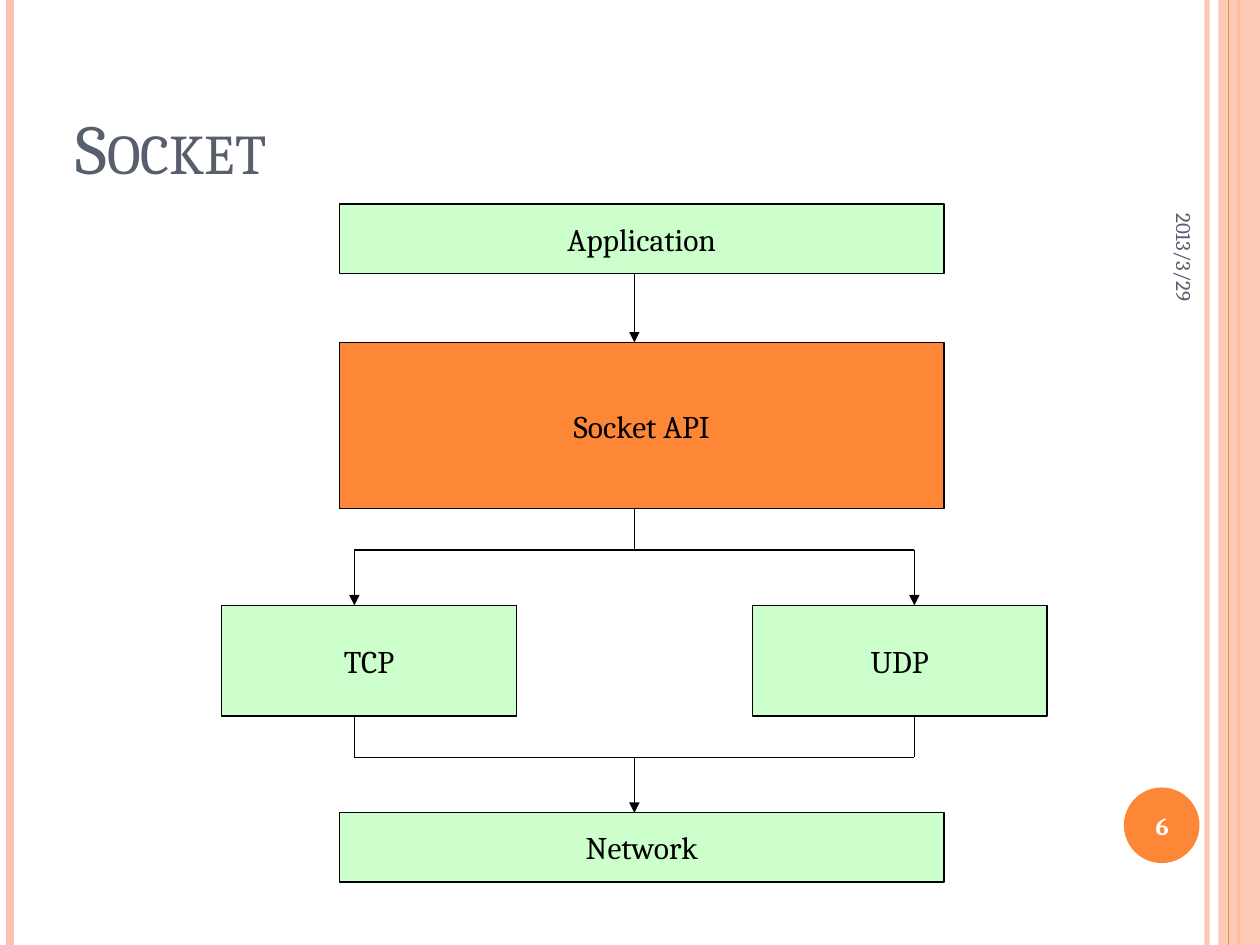
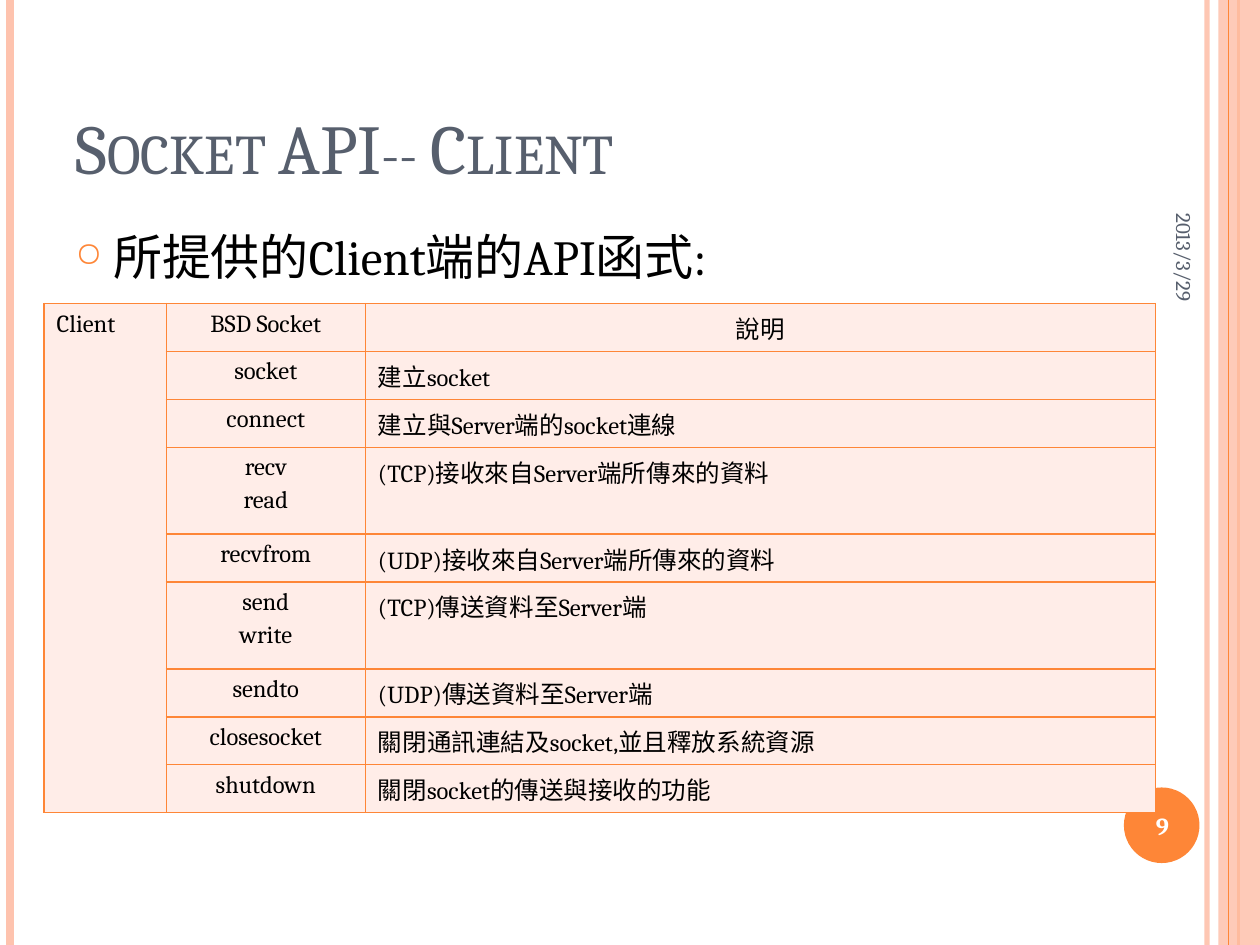
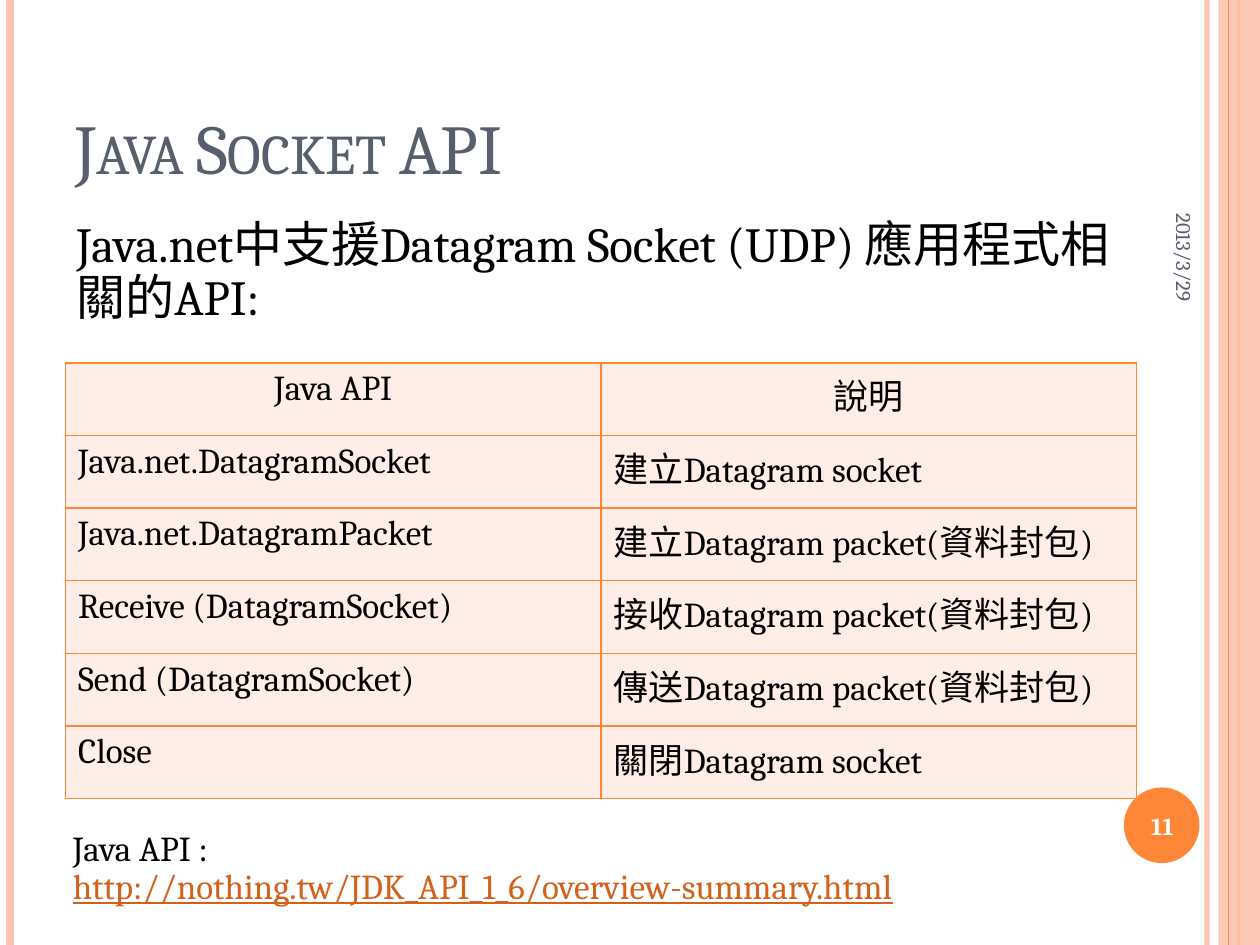
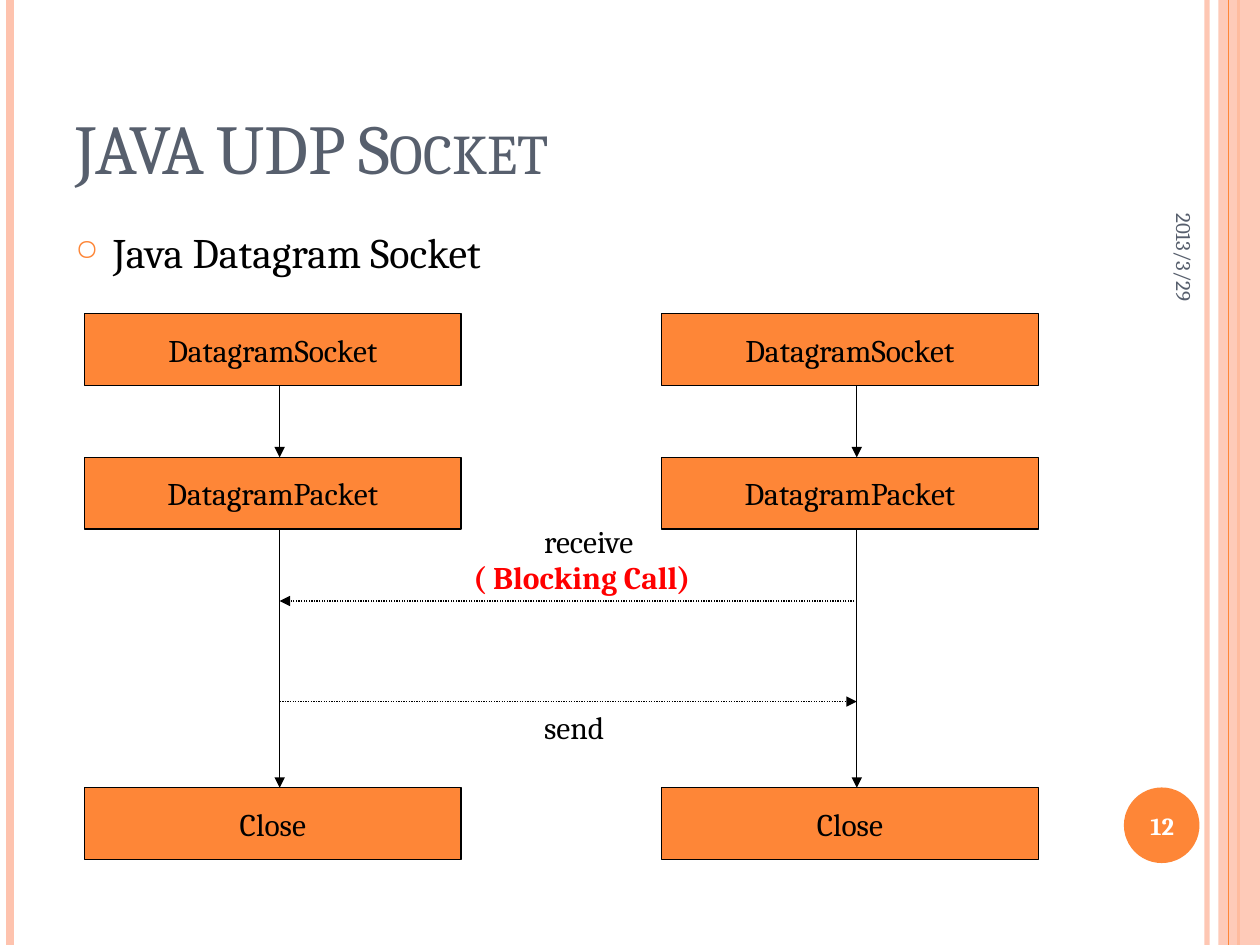
import itertools

import lxml.etree
import pptx
import pptx.dml.color
import pptx.enum.dml
import pptx.enum.shapes
import pptx.enum.text
import pptx.oxml.ns
import pptx.util

RGBColor = pptx.dml.color.RGBColor
ORANGE = RGBColor(0xFE, 0x86, 0x37)
PEACH = RGBColor(0xFE, 0xC3, 0xAE)
PALE_PEACH = RGBColor(0xFF, 0xED, 0xE8)
MINT = RGBColor(0xCC, 0xFF, 0xCC)
SLATE = RGBColor(0x57, 0x5F, 0x6D)
LINK = RGBColor(0xD2, 0x61, 0x1C)
RED = RGBColor(0xFF, 0x00, 0x00)
BLACK = RGBColor(0x00, 0x00, 0x00)
WHITE = RGBColor(0xFF, 0xFF, 0xFF)

FONT = "Cambria"
WIDTH, HEIGHT = 10, 7.5
LEFT = pptx.enum.text.PP_ALIGN.LEFT
CENTER = pptx.enum.text.PP_ALIGN.CENTER
RIGHT = pptx.enum.text.PP_ALIGN.RIGHT
TOP = pptx.enum.text.MSO_ANCHOR.TOP
MIDDLE = pptx.enum.text.MSO_ANCHOR.MIDDLE
DOTTED = pptx.enum.dml.MSO_LINE.ROUND_DOT
RECTANGLE = pptx.enum.shapes.MSO_SHAPE.RECTANGLE
OVAL = pptx.enum.shapes.MSO_SHAPE.OVAL
STRAIGHT = pptx.enum.shapes.MSO_CONNECTOR.STRAIGHT
Inches, Pt, qn = pptx.util.Inches, pptx.util.Pt, pptx.oxml.ns.qn


def add_text(slide, box, text, size, color=BLACK, align=LEFT, anchor=TOP, bold=False, fill=None):
    """Add a text box, or an outlined rectangle if a fill is given; box is in inches."""
    place = [Inches(length) for length in box]
    if fill is None:
        holder = slide.shapes.add_textbox(*place)
    else:
        holder = slide.shapes.add_shape(RECTANGLE, *place)
        holder.shadow.inherit = False
        holder.fill.solid()
        holder.fill.fore_color.rgb = fill
        holder.line.color.rgb = BLACK
        holder.line.width = Pt(0.75)
    frame = holder.text_frame
    frame.word_wrap = fill is None
    frame.vertical_anchor = anchor
    for index, words in enumerate(text.split("\n")):
        paragraph = frame.add_paragraph() if index else frame.paragraphs[0]
        paragraph.alignment = align
        run = paragraph.add_run()
        run.text = words
        run.font.name, run.font.size, run.font.bold = FONT, Pt(size), bold
        run.font.color.rgb = color
    return holder


def add_line(slide, start, end, color=BLACK, width=0.75, arrow=False, dash=None):
    line = slide.shapes.add_connector(STRAIGHT, *[Inches(length) for length in (*start, *end)])
    line.line.color.rgb = color
    line.line.width = Pt(width)
    if dash is not None:
        line.line.dash_style = dash
    if arrow:
        lxml.etree.SubElement(line.line._get_or_add_ln(), qn("a:tailEnd"), type="triangle")
    lxml.etree.SubElement(line._element.spPr, qn("a:effectLst"))
    return line


deck = pptx.Presentation()
deck.slide_width, deck.slide_height = Inches(WIDTH), Inches(HEIGHT)

# Shared frame: side bands, title, date and page number
pages = []
for heading, number in (("Socket", 6), ("Socket API-- Client", 9),
                        ("Java Socket API", 11), ("JAVA UDP Socket", 12)):
    page = deck.slides.add_slide(deck.slide_layouts[5])
    pages.append(page)

    rule = add_line(page, (9.58, 0), (9.58, HEIGHT), PEACH, 3)
    add_line(page, (0.08, 0), (0.08, HEIGHT), PEACH, 4.5)
    add_line(page, (9.83, 0), (9.83, HEIGHT), ORANGE, 1.5)
    band = page.shapes.add_shape(RECTANGLE, Inches(9.67), 0, Inches(WIDTH - 9.67), Inches(HEIGHT))
    add_line(page, (9.75, 0), (9.75, HEIGHT), ORANGE)
    badge = page.shapes.add_shape(OVAL, Inches(8.92), Inches(6.25), Inches(0.6), Inches(0.6))
    for shape, color in ((band, PEACH), (badge, ORANGE)):
        shape.shadow.inherit = False
        shape.fill.solid()
        shape.fill.fore_color.rgb = color
        shape.line.fill.background()
    for see_through, opacity in ((rule, "93000"), (band, "87000")):
        tint = see_through._element.spPr.find(".//" + qn("a:srgbClr"))
        lxml.etree.SubElement(tint, qn("a:alpha"), val=opacity)

    title = page.shapes.title
    title.left, title.top = Inches(0.5), Inches(0.3)
    title.width, title.height = Inches(8.17), Inches(1.25)
    title.text_frame.vertical_anchor = pptx.enum.text.MSO_ANCHOR.BOTTOM
    title.text_frame.auto_size = pptx.enum.text.MSO_AUTO_SIZE.NONE
    title.text_frame.paragraphs[0].alignment = LEFT
    run = title.text_frame.paragraphs[0].add_run()
    run.text = heading
    run.font.name, run.font.size = FONT, Pt(40)
    run.font.color.rgb = SLATE
    run.font._element.set("cap", "small")

    date = add_text(page, (8.3, 1.18, 2.2, 0.42), "2013/3/29", 12, SLATE, RIGHT, MIDDLE)
    date.rotation = 90
    add_text(page, (8.89, 6.27, 0.67, 0.57), str(number), 14, WHITE, CENTER, MIDDLE, bold=True)

layers_page, client_page, java_page, udp_page = pages

# Bulleted lead lines
for page, lead, size in ((client_page, "所提供的Client端的API函式:", 28),
                         (udp_page, "Java Datagram Socket", 24)):
    body = add_text(page, (0.5, 1.75, 8.17, 5.33), lead, size)
    paragraph = body.text_frame.paragraphs[0]
    paragraph.space_before = Pt(6)
    properties = paragraph._p.get_or_add_pPr()
    properties.set("marL", str(Inches(0.3)))
    properties.set("indent", str(-Inches(0.3)))
    bullet_color = lxml.etree.SubElement(properties, qn("a:buClr"))
    lxml.etree.SubElement(bullet_color, qn("a:srgbClr"), val=str(ORANGE))
    lxml.etree.SubElement(properties, qn("a:buSzPct"), val="70000")
    lxml.etree.SubElement(properties, qn("a:buChar"), char="○")

# Protocol layers on a grid of 56 columns and 49 rows
columns = [1.76 + (8.31 - 1.76) / 56 * step for step in range(57)]
rows = [1.62 + (7 - 1.62) / 49 * step
        for step in itertools.accumulate((0, 5, 5, 12, 3, 4, 8, 3, 4, 5))]
for layer, first, last, top, bottom, fill in (
        ("Application", 8, 49, 0, 1, MINT),
        ("Socket API", 8, 49, 2, 3, ORANGE),
        ("TCP", 0, 20, 5, 6, MINT),
        ("UDP", 36, 56, 5, 6, MINT),
        ("Network", 8, 49, 8, 9, MINT)):
    box = (columns[first], rows[top], columns[last] - columns[first], rows[bottom] - rows[top])
    add_text(layers_page, box, layer, 18, align=CENTER, anchor=MIDDLE, fill=fill)

tcp, trunk, udp = 9, 28, 47
for from_column, from_row, to_column, to_row, arrow in (
        (trunk, 1, trunk, 2, True),
        (trunk, 3, trunk, 4, False),
        (tcp, 4, udp, 4, False),
        (tcp, 4, tcp, 5, True),
        (udp, 4, udp, 5, True),
        (tcp, 6, tcp, 7, False),
        (udp, 6, udp, 7, False),
        (tcp, 7, udp, 7, False),
        (trunk, 7, trunk, 8, True)):
    add_line(layers_page, (columns[from_column], rows[from_row]),
             (columns[to_column], rows[to_row]), arrow=arrow)

# API tables
client_calls = (
    ("Client", "BSD Socket", "說明"),
    ("", "socket", "建立socket"),
    ("", "connect", "建立與Server端的socket連線"),
    ("", "recv\nread", "(TCP)接收來自Server端所傳來的資料"),
    ("", "recvfrom", "(UDP)接收來自Server端所傳來的資料"),
    ("", "send\nwrite", "(TCP)傳送資料至Server端"),
    ("", "sendto", "(UDP)傳送資料至Server端"),
    ("", "closesocket", "關閉通訊連結及socket,並且釋放系統資源"),
    ("", "shutdown", "關閉socket的傳送與接收的功能"),
)
java_calls = (
    ("Java API", "說明"),
    ("Java.net.DatagramSocket", "建立Datagram socket"),
    ("Java.net.DatagramPacket", "建立Datagram packet(資料封包)"),
    ("Receive (DatagramSocket)", "接收Datagram packet(資料封包)"),
    ("Send (DatagramSocket)", "傳送Datagram packet(資料封包)"),
    ("Close", "關閉Datagram socket"),
)
for page, calls, left, top, widths, row_height, size, header_aligns, aligns in (
        (client_page, client_calls, 0.35, 2.41, (0.97, 1.58, 6.27), 0.38, 14,
         (LEFT, CENTER, CENTER), (LEFT, CENTER, LEFT)),
        (java_page, java_calls, 0.52, 2.88, (4.25, 4.25), 3.46 / 6, 20,
         (CENTER, CENTER), (LEFT, LEFT))):
    heights = [0.69 if "\n" in call[1] else row_height for call in calls]
    table = page.shapes.add_table(len(calls), len(widths), Inches(left), Inches(top),
                                  Inches(sum(widths)), Inches(sum(heights))).table
    for column, width in zip(table.columns, widths):
        column.width = Inches(width)
    for row_index, call in enumerate(calls):
        table.rows[row_index].height = Inches(heights[row_index])
        for column_index, text in enumerate(call):
            cell = table.cell(row_index, column_index)
            cell.fill.solid()
            cell.fill.fore_color.rgb = PALE_PEACH
            for line_index, words in enumerate(text.split("\n")):
                frame = cell.text_frame
                paragraph = frame.add_paragraph() if line_index else frame.paragraphs[0]
                paragraph.alignment = (aligns if row_index else header_aligns)[column_index]
                paragraph.space_before = Pt(size * 0.2)
                paragraph.font.size = Pt(size)
                if words:
                    run = paragraph.add_run()
                    run.text = words
                    run.font.name, run.font.size, run.font.bold = FONT, Pt(size), False
                    run.font.color.rgb = BLACK
            cell_properties = cell._tc.get_or_add_tcPr()
            for position, side in enumerate(("a:lnL", "a:lnR", "a:lnT", "a:lnB")):
                border = lxml.etree.Element(qn(side), w=str(Pt(1)))
                border_fill = lxml.etree.SubElement(border, qn("a:solidFill"))
                lxml.etree.SubElement(border_fill, qn("a:srgbClr"), val=str(ORANGE))
                cell_properties.insert(position, border)
    if page is client_page:
        table.cell(0, 0).merge(table.cell(len(calls) - 1, 0))

# Java API: introduction and reference
introduction = add_text(java_page, (0.51, 1.7, 8.5, 0.95),
                        "Java.net中支援Datagram Socket (UDP) 應用程式相關的API:", 28)
reference = add_text(java_page, (0.48, 6.55, 9.24, 0.71),
                     "Java API :\nhttp://nothing.tw/JDK_API_1_6/overview-summary.html", 20)
for passage in (introduction, reference):
    for paragraph in passage.text_frame.paragraphs:
        paragraph.line_spacing = 0.9
address = reference.text_frame.paragraphs[1].runs[0]
address.font.underline = True
address.font.color.rgb = LINK

# UDP exchange: two lifelines on rows of equal height
ROW = 0.57
FIRST_ROW = 2.49
socket_y, packet_y, receive_y, send_y, close_y = (
    FIRST_ROW + ROW * step for step in (0, 2, 4, 5.4, 6.6))
steps = (("DatagramSocket", socket_y), ("DatagramPacket", packet_y), ("Close", close_y))
lifelines = []
for left in (0.67, 5.25):
    lifeline = left + 1.55
    lifelines.append(lifeline)
    for step, top in steps:
        add_text(udp_page, (left, top, 2.99, ROW), step, 18,
                 align=CENTER, anchor=MIDDLE, fill=ORANGE)
    for (_, upper), (_, lower) in itertools.pairwise(steps):
        add_line(udp_page, (lifeline, upper + ROW), (lifeline, lower), arrow=True)

near, far = lifelines
add_line(udp_page, (near, send_y), (far, send_y), arrow=True, dash=DOTTED)
add_line(udp_page, (far, receive_y), (near, receive_y), arrow=True, dash=DOTTED)
add_text(udp_page, (4.22, send_y, 1.45, 0.58), "send", 18)
add_text(udp_page, (4.22, 4.09, 2.06, 0.58), "receive", 18)
add_text(udp_page, (3.66, 4.38, 2.36, 0.4), "( Blocking Call)", 18, RED, bold=True)

deck.save("out.pptx")
